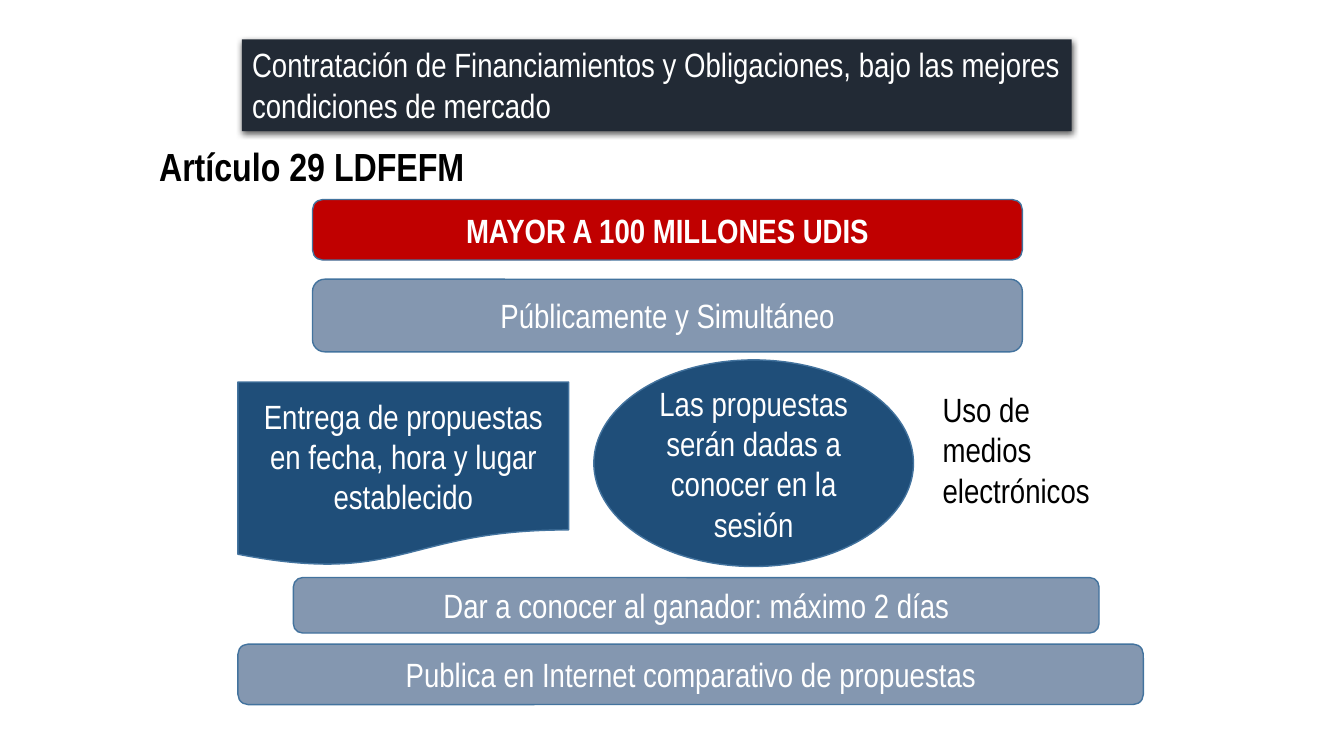
from dataclasses import dataclass

from lxml.etree import SubElement
from pptx import Presentation
from pptx.dml.color import RGBColor
from pptx.enum.shapes import MSO_SHAPE
from pptx.enum.text import MSO_ANCHOR, MSO_AUTO_SIZE, PP_ALIGN
from pptx.oxml.ns import qn
from pptx.shapes.autoshape import Shape
from pptx.slide import Slide
from pptx.util import Inches, Pt

WHITE = RGBColor(0xFF, 0xFF, 0xFF)
BLACK = RGBColor(0x00, 0x00, 0x00)
RED = RGBColor(0xC0, 0x00, 0x00)
GREY_BLUE = RGBColor(0x84, 0x97, 0xB0)
DARK_BLUE = RGBColor(0x1F, 0x4E, 0x79)
OUTLINE = RGBColor(0x43, 0x73, 0x9E)
NIGHT = RGBColor(0x22, 0x2A, 0x35)

FONT_NAME = "Arial Narrow"
BAR = MSO_SHAPE.ROUNDED_RECTANGLE


@dataclass(frozen=True)
class Box:
    left: float
    top: float
    width: float
    height: float

    def lengths(self) -> list[int]:
        return [Inches(n) for n in (self.left, self.top, self.width, self.height)]


@dataclass(frozen=True)
class Step:
    text: str
    box: Box
    fill: RGBColor
    form: MSO_SHAPE = BAR
    bold: bool = False


@dataclass(frozen=True)
class Label:
    text: str
    box: Box
    size: int = 24
    bold: bool = False


TITLE = Label(
    "Contratación de Financiamientos y Obligaciones, bajo las mejores condiciones de mercado",
    Box(2.4, 0.39, 8.23, 0.91),
)
STEPS = [
    Step("MAYOR A 100 MILLONES UDIS", Box(3.1, 1.98, 7.04, 0.6), RED, bold=True),
    Step("Públicamente y Simultáneo", Box(3.1, 2.77, 7.04, 0.72), GREY_BLUE),
    Step("Entrega de propuestas en fecha, hora y lugar establecido",
         Box(2.36, 3.79, 3.28, 1.83), DARK_BLUE, MSO_SHAPE.FLOWCHART_DOCUMENT),
    Step("Las propuestas serán dadas a conocer en la sesión",
         Box(5.89, 3.57, 3.17, 2.05), DARK_BLUE, MSO_SHAPE.OVAL),
    Step("Dar a conocer al ganador: máximo 2 días", Box(2.91, 5.73, 7.99, 0.55), GREY_BLUE),
    Step("Publica en Internet comparativo de propuestas", Box(2.36, 6.39, 8.98, 0.6), GREY_BLUE),
]
LABELS = [
    Label("Uso de\nmedios\nelectrónicos", Box(9.25, 3.81, 1.92, 1.31)),
    Label("Artículo 29 LDFEFM", Box(1.48, 1.36, 4.15, 0.57), 28, True),
]


def write_text(shape: Shape, text: str, color: RGBColor, size: int = 24, bold: bool = False,
               align: PP_ALIGN = PP_ALIGN.LEFT, anchor: MSO_ANCHOR = MSO_ANCHOR.TOP) -> None:
    frame = shape.text_frame
    frame.text = text
    frame_format = {"word_wrap": True, "auto_size": MSO_AUTO_SIZE.NONE, "vertical_anchor": anchor}
    for name, value in frame_format.items():
        setattr(frame, name, value)
    font_format = {"name": FONT_NAME, "size": Pt(size), "bold": bold}
    for paragraph in frame.paragraphs:
        paragraph.alignment = align
        for name, value in font_format.items():
            setattr(paragraph.font, name, value)
        paragraph.font.color.rgb = color


def paint(shape: Shape, fill: RGBColor) -> None:
    shape.fill.solid()
    shape.fill.fore_color.rgb = fill
    shape.shadow.inherit = False


def add_soft_shadow(shape: Shape) -> None:
    effects = shape._element.spPr.find(qn("a:effectLst"))
    shadow = SubElement(effects, qn("a:outerShdw"), blurRad=str(Pt(4.5)), dist=str(Pt(1.5)),
                        dir="5400000", algn="ctr", rotWithShape="0")
    color = SubElement(shadow, qn("a:srgbClr"), val=str(BLACK))
    SubElement(color, qn("a:alpha"), val="63000")


def place_title(slide: Slide) -> None:
    title = slide.shapes.title
    title.left, title.top, title.width, title.height = TITLE.box.lengths()
    write_text(title, TITLE.text, WHITE, TITLE.size, TITLE.bold)
    paint(title, NIGHT)
    add_soft_shadow(title)


def add_step(slide: Slide, step: Step) -> None:
    shape = slide.shapes.add_shape(step.form, *step.box.lengths())
    paint(shape, step.fill)
    shape.line.color.rgb = OUTLINE
    shape.line.width = Pt(1)
    write_text(shape, step.text, WHITE, bold=step.bold,
               align=PP_ALIGN.CENTER, anchor=MSO_ANCHOR.MIDDLE)


def add_label(slide: Slide, label: Label) -> None:
    textbox = slide.shapes.add_textbox(*label.box.lengths())
    write_text(textbox, label.text, BLACK, label.size, label.bold)


def main() -> None:
    presentation = Presentation()
    presentation.slide_width = Inches(13.33)
    presentation.slide_height = Inches(7.5)
    slide = presentation.slides.add_slide(presentation.slide_layouts[5])
    place_title(slide)
    for step in STEPS:
        add_step(slide, step)
    for label in LABELS:
        add_label(slide, label)
    presentation.save("out.pptx")


if __name__ == "__main__":
    main()
